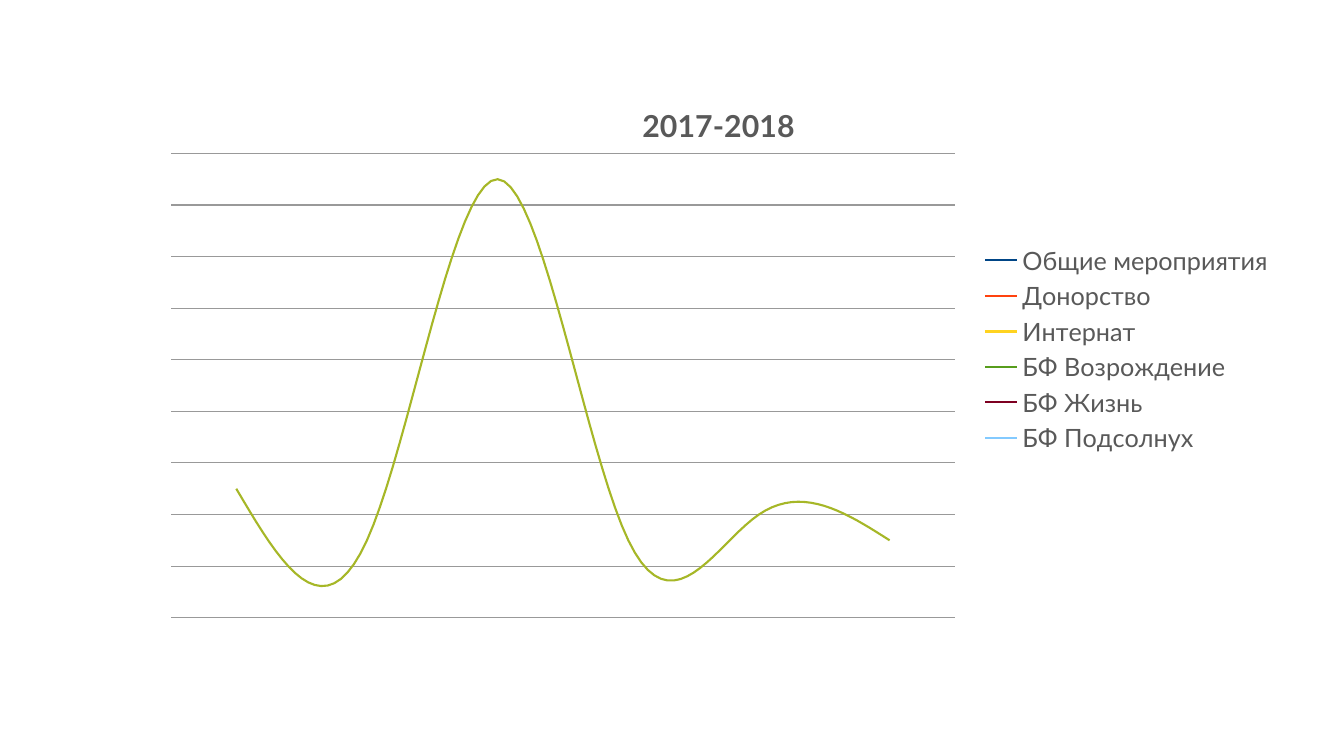
import pptx
import pptx.chart.data
import pptx.dml.color
import pptx.enum.chart
import pptx.oxml
import pptx.oxml.ns
import pptx.util

Inches = pptx.util.Inches
Pt = pptx.util.Pt
qn = pptx.oxml.ns.qn
RGBColor = pptx.dml.color.RGBColor

PERIOD = "2017-2018"
EVENTS = [
    ("Общие мероприятия", 5),
    ("Донорство", 3),
    ("Интернат", 17),
    ("БФ Возрождение", 3),
    ("БФ Жизнь", 4),
    ("БФ Подсолнух", 3),
]
FONT = "Lato"
TEXT_GREY = RGBColor(0x59, 0x59, 0x59)
GRID_GREY = RGBColor(0x99, 0x99, 0x99)
CURVE_GREEN = RGBColor(0xA6, 0xB7, 0x27)
PLOT_LAYOUT = {"x": 0.02, "y": 0.15, "w": 0.69, "h": 0.83}
TITLE_LAYOUT = {"x": 0.43, "y": 0.05}


def style_font(font, size):
    font.name = FONT
    font.size = Pt(size)
    font.color.rgb = TEXT_GREY


def place(element, position, fractions, target=""):
    for old_layout in element.findall(qn("c:layout")):
        element.remove(old_layout)
    modes = "".join(f'<c:{key}Mode val="edge"/>' for key in "xy")
    sizes = "".join(f'<c:{key} val="{value}"/>' for key, value in fractions.items())
    element.insert(position, pptx.oxml.parse_xml(
        f'<c:layout {pptx.oxml.ns.nsdecls("c")}><c:manualLayout>'
        f"{target}{modes}{sizes}</c:manualLayout></c:layout>"))


deck = pptx.Presentation()
deck.slide_width, deck.slide_height = Inches(13.33), Inches(7.5)
slide = deck.slides.add_slide(deck.slide_layouts[6])

event_counts = pptx.chart.data.CategoryChartData()
event_counts.categories = [event for event, count in EVENTS]
event_counts.add_series(PERIOD, [count for event, count in EVENTS])
chart = slide.shapes.add_chart(
    pptx.enum.chart.XL_CHART_TYPE.LINE,
    Inches(1.47), Inches(0.69), Inches(11.27), Inches(5.55), event_counts).chart
style_font(chart.font, 18)

heading = chart.chart_title.text_frame.paragraphs[0].add_run()
heading.text = PERIOD
style_font(heading.font, 21.6)
heading.font.bold = True
title_xml = chart.chart_title._element
place(title_xml, 1, TITLE_LAYOUT)
title_xml.find(qn("c:overlay")).set("val", "1")

chart.has_legend = True
chart.legend.position = pptx.enum.chart.XL_LEGEND_POSITION.RIGHT
chart.legend.include_in_layout = False
style_font(chart.legend.font, 18)

chart.category_axis.visible = False
count_axis = chart.value_axis
count_axis.visible = False
count_axis.minimum_scale, count_axis.maximum_scale = 0, 18
count_axis.major_unit = 2
count_axis.has_major_gridlines = True
count_axis.major_gridlines.format.line.color.rgb = GRID_GREY
count_axis.major_gridlines.format.line.width = Pt(0.75)

plot = chart.plots[0]
plot.vary_by_categories = True
curve = plot.series[0]
curve.smooth = True
curve.marker.style = pptx.enum.chart.XL_MARKER_STYLE.NONE
curve.format.line.color.rgb = CURVE_GREEN
curve.format.line.width = Pt(1.5)
place(chart._chartSpace.chart.plotArea, 0, PLOT_LAYOUT,
      '<c:layoutTarget val="inner"/>')

deck.save("out.pptx")
